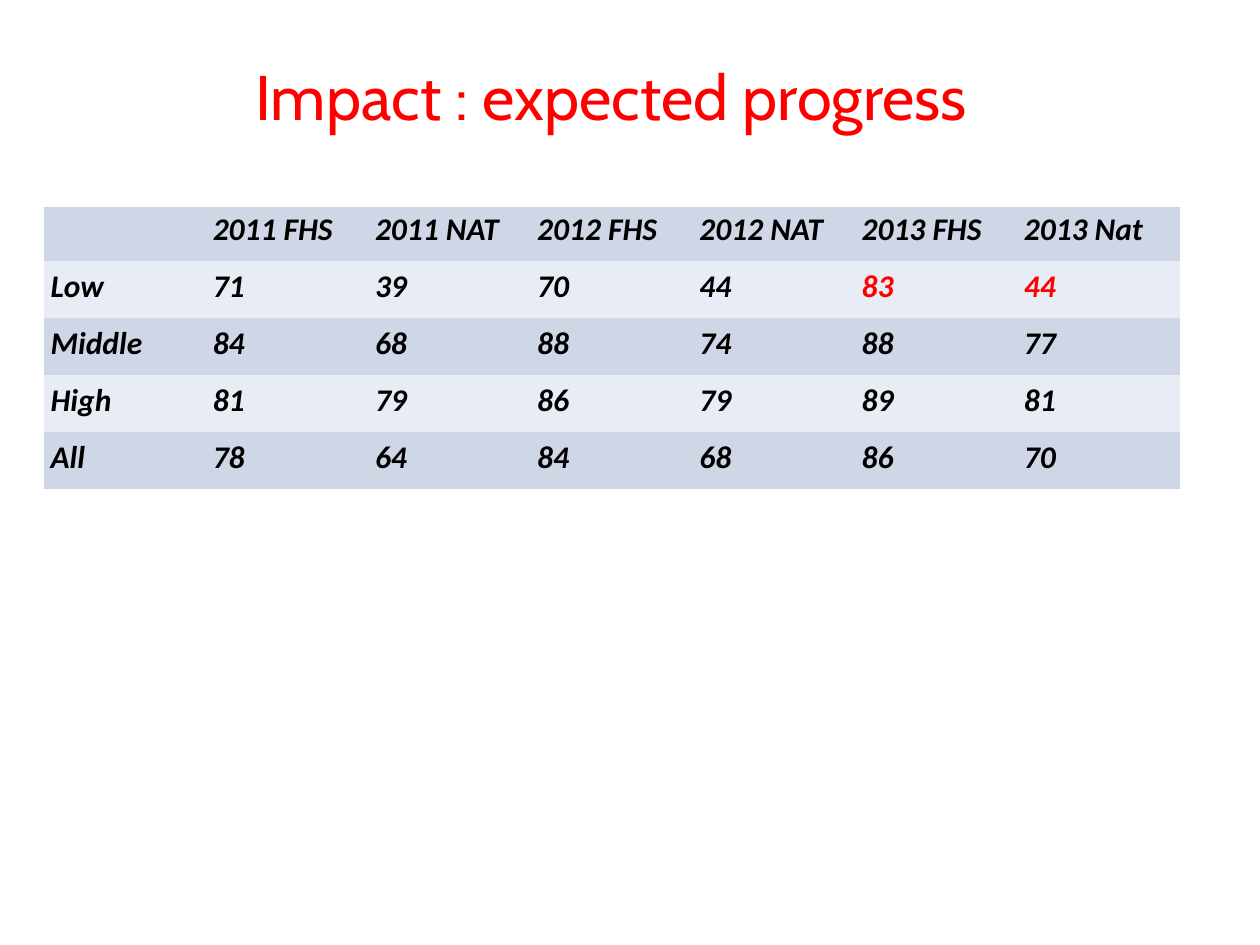
import dataclasses

import pptx
import pptx.dml.color
import pptx.enum.text
import pptx.oxml
import pptx.oxml.ns
import pptx.util

Cm = pptx.util.Cm
Pt = pptx.util.Pt

RED, BLACK, WHITE = "FF0000", "000000", "FFFFFF"
BANDS = ("CFD7E7", "E8ECF4")
PLAIN_TABLE_STYLE = "{2D5ABB26-0587-4C30-8999-92F81FD0307C}"
LEFT = Cm(0.89)
COLUMN_WIDTH, ROW_HEIGHT = Cm(3.27), Cm(1.15)
CELL_MARGIN = Cm(0.13)

TITLE_FORMAT = {"name": "Cabin", "size": Pt(36)}
CELL_FORMAT = {"name": "Calibri", "size": Pt(18), "bold": True, "italic": True}


@dataclasses.dataclass
class ProgressRow:
    label: str
    values: tuple
    highlighted: tuple = ()  # positions of the values shown in red


ROWS = [
    ProgressRow("", ("2011 FHS", "2011 NAT", "2012 FHS", "2012 NAT", "2013 FHS", "2013 Nat")),
    ProgressRow("Low", (71, 39, 70, 44, 83, 44), highlighted=(4, 5)),
    ProgressRow("Middle", (84, 68, 88, 74, 88, 77)),
    ProgressRow("High", (81, 79, 86, 79, 89, 81)),
    ProgressRow("All", (78, 64, 84, 68, 86, 70)),
]


def paint(target, colour: str) -> None:
    """Colour a solid fill or a font colour."""
    target.rgb = pptx.dml.color.RGBColor.from_string(colour)


def write(para, text: str, text_format: dict, colour: str) -> None:
    span = para.add_run()
    span.text = text
    for name, value in text_format.items():
        setattr(span.font, name, value)
    paint(span.font.color, colour)


def add_top_border(cell, colour: str, points: float) -> None:
    border = pptx.oxml.parse_xml(
        f'<a:lnT {pptx.oxml.ns.nsdecls("a")} w="{Pt(points)}"><a:solidFill>'
        f'<a:srgbClr val="{colour}"/></a:solidFill></a:lnT>'
    )
    cell._tc.get_or_add_tcPr().insert(0, border)


def fill_cell(cell, text: str, colour: str, band: str) -> None:
    for side in ("left", "right", "top", "bottom"):
        setattr(cell, f"margin_{side}", CELL_MARGIN)
    cell.fill.solid()
    paint(cell.fill.fore_color, band)
    if text:
        write(cell.text_frame.paragraphs[0], text, CELL_FORMAT, colour)


def add_title(page, text: str) -> None:
    box = page.shapes.add_textbox(LEFT, Cm(0.33), Cm(22.86), Cm(3.18))
    frame = box.text_frame
    frame.word_wrap = True
    frame.vertical_anchor = pptx.enum.text.MSO_ANCHOR.MIDDLE
    para = frame.paragraphs[0]
    para.alignment = pptx.enum.text.PP_ALIGN.CENTER
    write(para, text, TITLE_FORMAT, RED)


def add_progress_table(page, rows: list[ProgressRow]) -> None:
    columns = len(rows[0].values) + 1
    table = page.shapes.add_table(
        len(rows), columns, LEFT, Cm(4.12), COLUMN_WIDTH * columns, ROW_HEIGHT * len(rows)
    ).table
    table._tbl.tblPr.find(pptx.oxml.ns.qn("a:tableStyleId")).text = PLAIN_TABLE_STYLE
    for column in table.columns:
        column.width = COLUMN_WIDTH

    for index, row in enumerate(rows):
        table.rows[index].height = ROW_HEIGHT
        band = BANDS[index % 2]
        fill_cell(table.cell(index, 0), row.label, BLACK, band)
        for position, value in enumerate(row.values):
            colour = RED if position in row.highlighted else BLACK
            fill_cell(table.cell(index, position + 1), str(value), colour, band)

    # White rule above the heading row
    for cell in table.rows[0].cells:
        add_top_border(cell, WHITE, 3)


def main() -> None:
    deck = pptx.Presentation()
    deck.slide_width, deck.slide_height = Cm(25.4), Cm(19.05)
    page = deck.slides.add_slide(deck.slide_layouts[6])
    add_title(page, "Impact : expected progress")
    add_progress_table(page, ROWS)
    deck.save("out.pptx")


if __name__ == "__main__":
    main()
